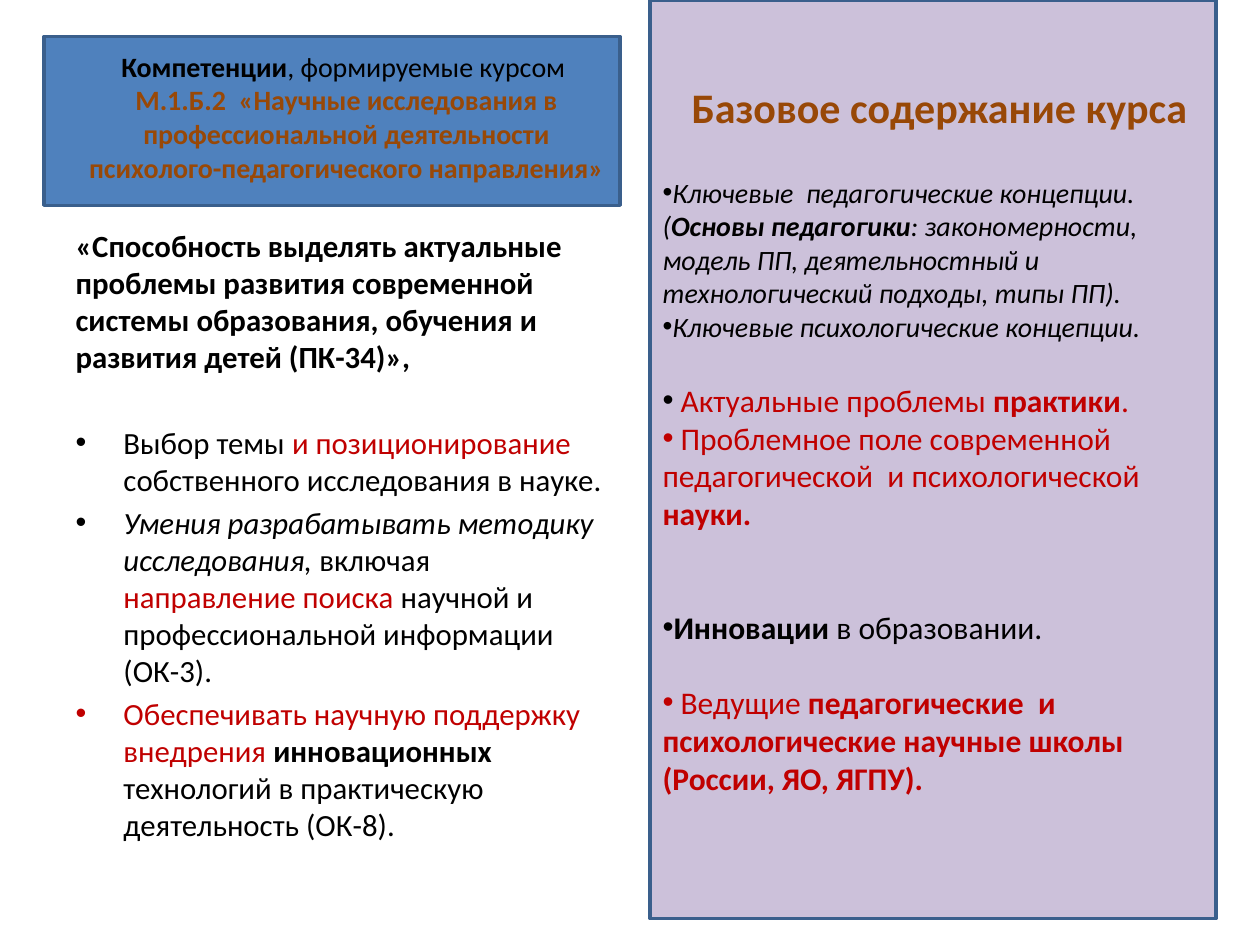
from lxml.etree import SubElement
from pptx import Presentation
from pptx.dml.color import RGBColor as RGB
from pptx.enum.shapes import MSO_SHAPE as SHAPE
from pptx.enum.text import MSO_ANCHOR as ANCHOR, MSO_AUTO_SIZE as FIT, PP_ALIGN as ALIGN
from pptx.oxml.ns import qn
from pptx.util import Inches, Pt

BLACK, RED, BROWN = "000000", "C00000", "984807"


def color(value):
    return RGB.from_string(value)


def write(frame, paragraphs):
    frame.word_wrap = True
    frame.auto_size = FIT.NONE
    for i, (size, before, hanging, bullet, pieces) in enumerate(paragraphs):
        paragraph = frame.paragraphs[0] if i == 0 else frame.add_paragraph()
        paragraph.space_before = Pt(before)
        props = paragraph._p.get_or_add_pPr()
        props.set("marL", str(Inches(hanging)))
        props.set("indent", str(-Inches(hanging)))
        if bullet:
            SubElement(props, qn("a:buFont")).set("typeface", "Arial")
            SubElement(props, qn("a:buChar")).set("char", "•")
        else:
            SubElement(props, qn("a:buNone"))
        for text, tint, style in pieces:
            run = paragraph.add_run()
            run.text = text
            run.font.name = "Calibri"
            run.font.size = Pt(size)
            run.font.color.rgb = color(tint)
            run.font.bold = "b" in style
            run.font.italic = "i" in style


prs = Presentation()
prs.slide_width, prs.slide_height = Inches(10), Inches(7.5)
slide = prs.slides.add_slide(prs.slide_layouts[1])
shapes = slide.shapes

panels = [
    (5.16, 0, 4.49, 7.29, "CCC1DA"),
    (0.35, 0.29, 4.57, 1.34, "4F81BD"),
]
for layer, (left, top, width, height, fill) in enumerate(panels):
    panel = shapes.add_shape(SHAPE.RECTANGLE, Inches(left), Inches(top), Inches(width), Inches(height))
    panel.shadow.inherit = False
    panel.fill.solid()
    panel.fill.fore_color.rgb = color(fill)
    panel.line.color.rgb = color("3A5F8C")
    panel.line.width = Pt(2)
    shapes._spTree.insert(2 + layer, panel._element)

competences_title = shapes.title
competences_title.left, competences_title.top = Inches(0.5), Inches(0.3)
competences_title.width, competences_title.height = Inches(4.5), Inches(1.25)
write(competences_title.text_frame, [
    (16, 0, 0, False, [
        ("Компетенции", BLACK, "b"),
        (", формируемые курсом  ", BLACK, ""),
        ("М.1.Б.2  «Научные исследования в профессиональной деятельности "
         "психолого-педагогического направления»", BROWN, "b"),
    ]),
])
competences_title.text_frame.vertical_anchor = ANCHOR.MIDDLE
competences_title.text_frame.paragraphs[0].alignment = ALIGN.CENTER

competences = slide.placeholders[1]
competences.left, competences.top = Inches(0.5), Inches(1.75)
competences.width, competences.height = Inches(4.42), Inches(4.95)
write(competences.text_frame, [
    (17.6, 3.5, 0, False, [
        ("«Способность выделять актуальные проблемы развития современной системы "
         "образования, обучения и развития детей (ПК-34)»,", BLACK, "b"),
    ]),
    (17.6, 28, 0.38, True, [
        ("Выбор темы ", BLACK, ""),
        ("и позиционирование ", RED, ""),
        ("собственного исследования в науке.", BLACK, ""),
    ]),
    (17.6, 3.5, 0.38, True, [
        ("Умения разрабатывать методику исследования, ", BLACK, "i"),
        ("включая ", BLACK, ""),
        ("направление поиска ", RED, ""),
        ("научной и профессиональной информации (ОК-3).", BLACK, ""),
    ]),
    (17.6, 3.5, 0.38, True, [
        ("Обеспечивать научную поддержку внедрения ", RED, ""),
        ("инновационных ", BLACK, "b"),
        ("технологий в практическую деятельность (ОК-8).", BLACK, ""),
    ]),
])

content_title = shapes.add_textbox(Inches(5.39), Inches(0.6), Inches(4.41), Inches(0.5))
write(content_title.text_frame, [
    (24, 0, 0, False, [("Базовое содержание курса", BROWN, "b")]),
])

content = shapes.add_textbox(Inches(5.16), Inches(1.34), Inches(4.65), Inches(5.39))
write(content.text_frame, [
    (16, 0, 0, True, [
        ("Ключевые  педагогические концепции.  (", BLACK, "i"),
        ("Основы педагогики", BLACK, "bi"),
        (": закономерности, модель ПП, деятельностный и технологический подходы, типы ПП).", BLACK, "i"),
    ]),
    (16, 0, 0, True, [("Ключевые психологические концепции.", BLACK, "i")]),
    (18, 21.6, 0, True, [
        (" ", BLACK, ""),
        ("Актуальные проблемы ", RED, ""),
        ("практики", RED, "b"),
        (".", RED, ""),
    ]),
    (18, 0, 0, True, [
        (" Проблемное поле современной педагогической  и психологической ", RED, ""),
        ("науки.", RED, "b"),
    ]),
    (18, 43.2, 0, True, [
        ("Инновации ", BLACK, "b"),
        ("в образовании.", BLACK, ""),
    ]),
    (18, 21.6, 0, True, [
        (" Ведущие ", RED, ""),
        ("педагогические  и психологические научные школы (России, ЯО, ЯГПУ).", RED, "b"),
    ]),
])

prs.save("out.pptx")
